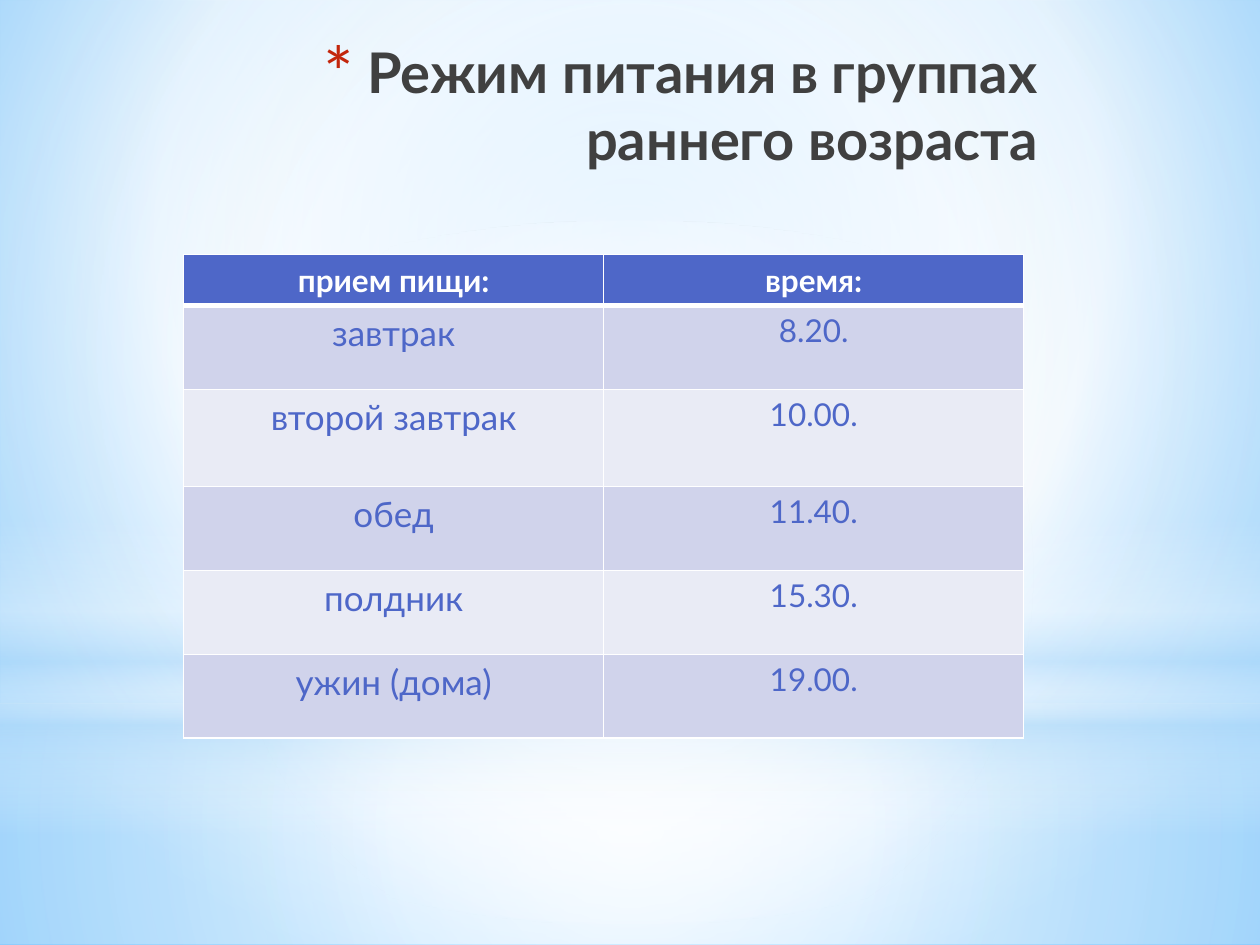
from dataclasses import dataclass

from lxml import etree
from pptx import Presentation
from pptx.dml.color import RGBColor
from pptx.enum.shapes import MSO_SHAPE
from pptx.enum.text import MSO_ANCHOR, MSO_AUTO_SIZE, PP_ALIGN
from pptx.oxml import parse_xml
from pptx.oxml.ns import nsdecls, qn
from pptx.util import Pt

RECT, OVAL = MSO_SHAPE.RECTANGLE, MSO_SHAPE.OVAL
CENTER, RIGHT = PP_ALIGN.CENTER, PP_ALIGN.RIGHT
MIDDLE, NO_FIT = MSO_ANCHOR.MIDDLE, MSO_AUTO_SIZE.NONE

FONT = "Lato"
WIDE, HIGH = 720, 540
COLORS = {
    "white": "FFFFFF",
    "sky": "B4DCFA",
    "light": "9ED5FF",
    "deep": "5BB9FF",
    "blue": "4E67C8",
    "odd": "D0D3EB",
    "even": "E9EBF5",
    "dark": "404040",
    "red": "C3260C",
}


@dataclass
class Stop:
    place: int
    color: str
    alpha: int = 100


@dataclass
class Glow:
    """A soft backdrop shape; focus is None for a top-down gradient."""
    kind: MSO_SHAPE
    top: float
    height: float
    stops: list[Stop]
    focus: tuple | None = (50, 50, 50, 50)


@dataclass
class Meal:
    name: str
    time: str
    height: float = 48


SKY = [Stop(0, "light"), Stop(60, "white"), Stop(100, "deep")]
GLOWS = [
    Glow(RECT, 402, 138, [Stop(0, "white", 91), Stop(37, "white", 76), Stop(100, "sky", 79)]),
    Glow(RECT, 0, 402, [Stop(0, "white", 89), Stop(48, "white", 62), Stop(100, "sky", 79)]),
    Glow(RECT, 297, 180, [
        Stop(0, "white", 0), Stop(29, "white", 30), Stop(45, "sky", 40),
        Stop(55, "white", 26), Stop(65, "sky", 60), Stop(100, "white", 0),
    ], None),
    Glow(OVAL, 126, 402, [Stop(0, "white"), Stop(56, "white", 0)]),
]
HEAD = Meal("прием пищи:", "время:", 29)
MEALS = [
    Meal("завтрак", "8.20."),
    Meal("второй завтрак", "10.00.", 55.4),
    Meal("обед", "11.40."),
    Meal("полдник", "15.30."),
    Meal("ужин (дома)", "19.00."),
]


def rgb(name: str) -> RGBColor:
    return RGBColor.from_string(COLORS[name])


def blend(stops: list[Stop], focus: tuple | None):
    """Make a gradient fill element."""
    marks = "".join(
        f'<a:gs pos="{s.place * 1000}"><a:srgbClr val="{COLORS[s.color]}">'
        f'<a:alpha val="{s.alpha * 1000}"/></a:srgbClr></a:gs>' for s in stops)
    if focus:
        sides = " ".join(f'{k}="{v * 1000}"' for k, v in zip("ltrb", focus))
        shade = f'<a:path path="circle"><a:fillToRect {sides}/></a:path>'
    else:
        shade = '<a:lin ang="5400000" scaled="0"/>'
    return parse_xml(f'<a:gradFill {nsdecls("a")} rotWithShape="1">'
                     f'<a:gsLst>{marks}</a:gsLst>{shade}</a:gradFill>')


def swap_fill(fill, stops: list[Stop], focus: tuple | None, root) -> None:
    fill.gradient()
    old = next(root.iter(qn("a:gradFill")))
    old.getparent().replace(old, blend(stops, focus))


def draw_glow(slide, glow: Glow) -> None:
    shape = slide.shapes.add_shape(glow.kind, 0, Pt(glow.top), Pt(WIDE), Pt(glow.height))
    shape.shadow.inherit = False
    shape.line.fill.background()
    swap_fill(shape.fill, glow.stops, glow.focus, shape._element)


def write(frame, text: str, *, size: float, color: str, align, bold: bool = False):
    para = frame.paragraphs[0]
    para.alignment = align
    run = para.add_run()
    run.text = text
    font = run.font
    font.name, font.size, font.bold = FONT, Pt(size), bold
    font.color.rgb = rgb(color)
    return para


def edge(cell, side: str, width: float) -> None:
    line = etree.SubElement(cell._tc.get_or_add_tcPr(), qn(f"a:ln{side}"), w=str(Pt(width)))
    fill = etree.SubElement(line, qn("a:solidFill"))
    etree.SubElement(fill, qn("a:srgbClr"), val=COLORS["white"])


def draw_table(slide) -> None:
    meals = [HEAD, *MEALS]
    tall = sum(m.height for m in meals)
    table = slide.shapes.add_table(len(meals), 2, Pt(105), Pt(145.5), Pt(480), Pt(tall)).table
    table.first_row = table.horz_banding = False
    for row, meal in enumerate(meals):
        table.rows[row].height = Pt(meal.height)
        head = row == 0
        back = "blue" if head else ("even", "odd")[row % 2]
        for col, (text, size) in enumerate([(meal.name, 20), (meal.time, 18)]):
            cell = table.cell(row, col)
            for side in "LRTB":
                thick = (row, side) in [(0, "B"), (1, "T")]
                edge(cell, side, 3 if thick else 1)
            cell.fill.solid()
            cell.fill.fore_color.rgb = rgb(back)
            write(cell.text_frame, text, size=18 if head else size,
                  color="white" if head else "blue", align=CENTER, bold=head)


def draw_title(slide) -> None:
    title = slide.shapes.title
    title.left, title.top, title.width, title.height = Pt(88), Pt(15), Pt(512.5), Pt(90)
    frame = title.text_frame
    frame.word_wrap, frame.auto_size, frame.vertical_anchor = True, NO_FIT, MIDDLE
    para = write(frame, "Режим питания в группах раннего возраста",
                 size=32, color="dark", align=RIGHT, bold=True)
    props = para._p.get_or_add_pPr()
    props.set("marL", str(Pt(25)))
    props.set("indent", str(-Pt(25)))
    tint = etree.SubElement(props, qn("a:buClr"))
    etree.SubElement(tint, qn("a:srgbClr"), val=COLORS["red"])
    etree.SubElement(props, qn("a:buSzPct"), val="128000")
    etree.SubElement(props, qn("a:buFont"), typeface=FONT)
    etree.SubElement(props, qn("a:buChar"), char="*")
    slide.shapes._spTree.append(title._element)  # bring to front


def main() -> None:
    deck = Presentation()
    deck.slide_width, deck.slide_height = Pt(WIDE), Pt(HIGH)
    slide = deck.slides.add_slide(deck.slide_layouts[5])
    swap_fill(slide.background.fill, SKY, (20, 10, 20, 60), slide._element)
    for glow in GLOWS:
        draw_glow(slide, glow)
    draw_table(slide)
    draw_title(slide)
    deck.save("out.pptx")


if __name__ == "__main__":
    main()
